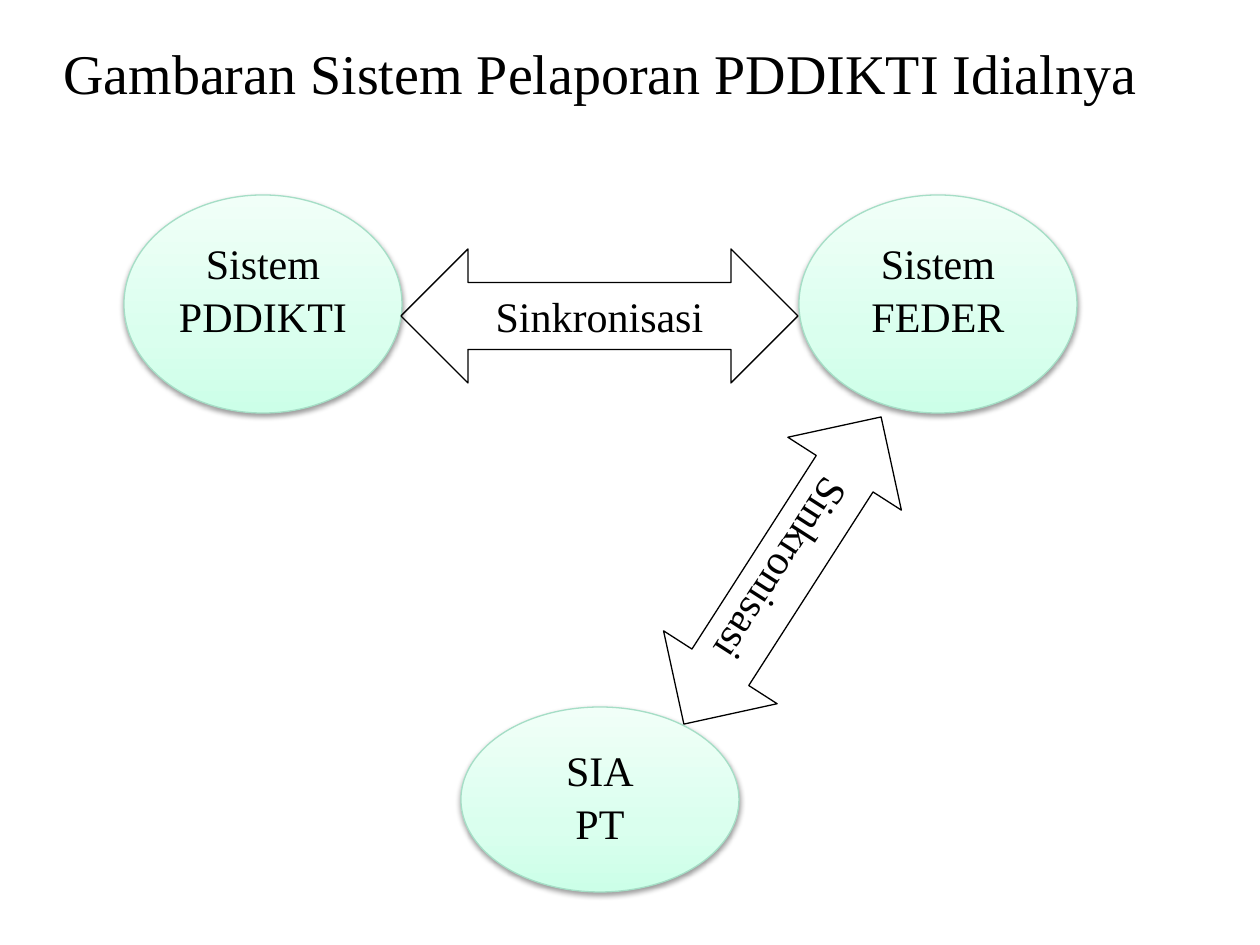
from copy import deepcopy
from dataclasses import dataclass

from lxml import etree
from pptx import Presentation
from pptx.dml.color import RGBColor
from pptx.enum.shapes import MSO_SHAPE
from pptx.enum.text import MSO_ANCHOR, PP_ALIGN
from pptx.oxml.ns import qn
from pptx.util import Emu, Pt

ELLIPSE = MSO_SHAPE.OVAL
DOUBLE_ARROW = MSO_SHAPE.LEFT_RIGHT_ARROW
TOP, MIDDLE = MSO_ANCHOR.TOP, MSO_ANCHOR.MIDDLE
CENTER = PP_ALIGN.CENTER
EMU_PER_PX = 914400 // 126


@dataclass(frozen=True)
class Theme:
    font: str = "Times New Roman"
    title_size: int = 32
    label_size: int = 24
    ink: str = "000000"
    node_line: str = "A5DEC6"
    node_stops: tuple = ((0, "CCFFE8"), (0.35, "DAFFEE"), (1, "F1FFF8"))
    line_width: float = 0.75
    node_spacing: float = 1.05


THEME = Theme()


def px(n):
    return Emu(n * EMU_PER_PX)


def rgb(code):
    return RGBColor.from_string(code)


def write_text(s, lines, size, anchor, top=6, spacing=1.0):
    tf = s.text_frame
    tf.word_wrap = True
    tf.vertical_anchor = anchor
    tf.margin_top = px(top)
    for i, line in enumerate(lines):
        p = tf.paragraphs[0] if i == 0 else tf.add_paragraph()
        p.alignment = CENTER
        p.line_spacing = spacing
        r = p.add_run()
        r.text = line
        r.font.name = THEME.font
        r.font.size = Pt(size)
        r.font.color.rgb = rgb(THEME.ink)


def add_outlined(slide, kind, box, line_color):
    s = slide.shapes.add_shape(kind, *map(px, box))
    s.shadow.inherit = False
    s.line.color.rgb = rgb(line_color)
    s.line.width = Pt(THEME.line_width)
    return s


def fill_gradient(s):
    """Fill with the theme's stops, running from bottom to top."""
    s.fill.gradient()
    s.fill.gradient_angle = 90
    stop_list = s._element.spPr.find(".//" + qn("a:gsLst"))
    stop_list.append(deepcopy(stop_list[0]))
    for stop, (position, color) in zip(s.fill.gradient_stops, THEME.node_stops):
        stop.position = position
        stop.color.rgb = rgb(color)


def add_shadow(s):
    effects = s._element.spPr.find(qn("a:effectLst"))
    shadow = etree.SubElement(effects, qn("a:outerShdw"), blurRad="40000",
                              dist="20000", dir="5400000", rotWithShape="0")
    color = etree.SubElement(shadow, qn("a:srgbClr"), val=THEME.ink)
    etree.SubElement(color, qn("a:alpha"), val="38000")


def add_node(slide, box, lines):
    s = add_outlined(slide, ELLIPSE, box, THEME.node_line)
    fill_gradient(s)
    add_shadow(s)
    write_text(s, lines, THEME.label_size, TOP, 8, THEME.node_spacing)


def add_sync_arrow(slide, box, rotation=0):
    s = add_outlined(slide, DOUBLE_ARROW, box, THEME.ink)
    s.fill.background()
    s.rotation = rotation
    write_text(s, ["Sinkronisasi"], THEME.label_size, MIDDLE)


def add_title(slide, box, text):
    s = slide.shapes.add_textbox(*map(px, box))
    write_text(s, [text], THEME.title_size, TOP, 13)


def main():
    prs = Presentation()
    prs.slide_width, prs.slide_height = px(1260), px(945)
    slide = prs.slides.add_slide(prs.slide_layouts[6])

    add_node(slide, (124, 195, 278, 218), ["Sistem PDDIKTI"])
    add_node(slide, (799, 195, 278, 218), ["Sistem FEDER"])
    add_sync_arrow(slide, (401, 249, 397, 134))
    add_node(slide, (461, 707, 278, 185), ["SIA", "PT"])
    add_sync_arrow(slide, (600, 503, 365, 135), 122.7)
    add_title(slide, (-10, 26, 1221, 102),
              "Gambaran Sistem Pelaporan PDDIKTI Idialnya")

    prs.save("out.pptx")


if __name__ == "__main__":
    main()
